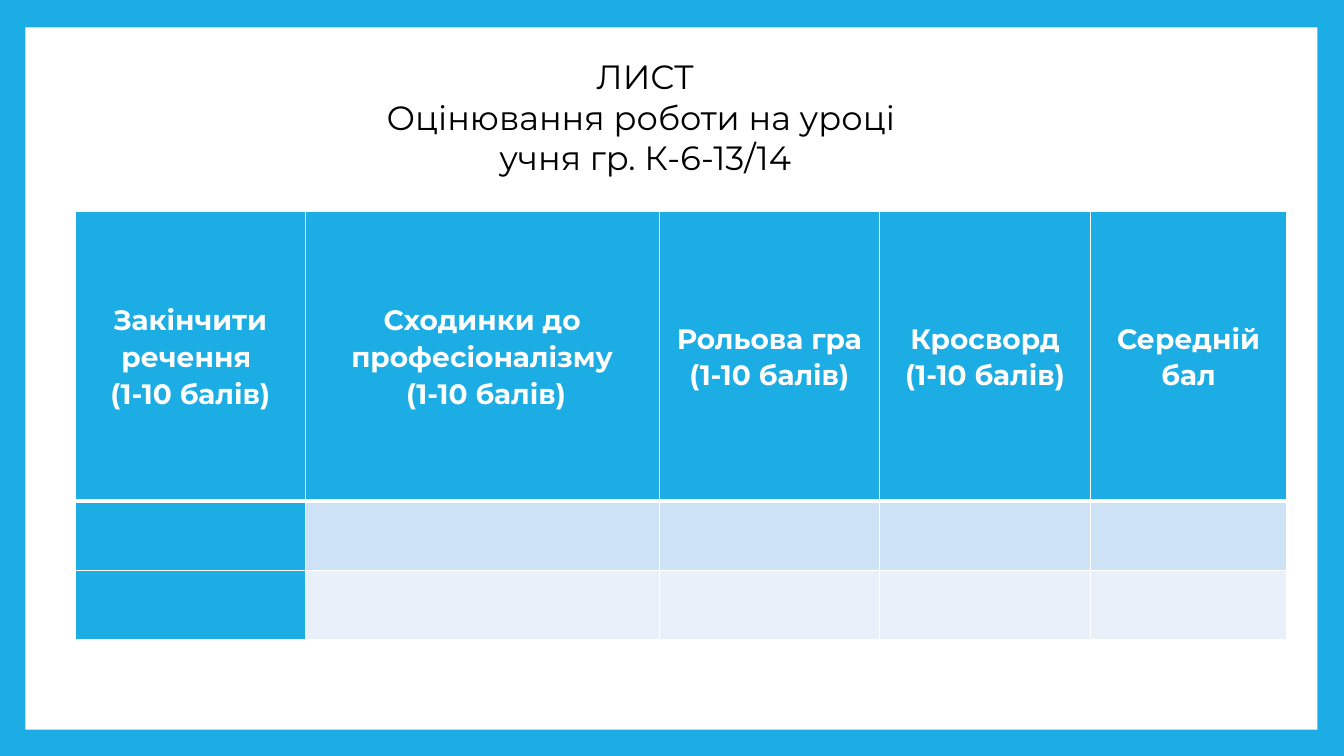
import pptx
import pptx.util
import pptx.dml.color
import pptx.enum.shapes
import pptx.enum.text
import pptx.oxml.ns
from lxml import etree

Cm, Pt = pptx.util.Cm, pptx.util.Pt

# Content
TITLE = ["ЛИСТ", "Оцінювання роботи на уроці ", "учня гр. К-6-13/14"]
HEADS = [
    ["Закінчити", "речення ", "(1-10 балів)"],
    ["Сходинки до професіоналізму", " (1-10 балів)"],
    ["Рольова гра", "(1-10 балів)"],
    ["Кросворд", "(1-10 балів)"],
    ["Середній бал"],
]

# Sizes in centimetres
SLIDE = (33.87, 19.05)
PANEL = (0.64, 0.69, 32.56, 17.7)
TITLE_BOX = (8.26, 1.24, 16, 3.4)
GRID_AT = (1.9, 5.33)
COLS = [5.79, 8.92, 5.56, 5.31, 4.95]
ROWS = [7.29, 1.75, 1.75]

THEME = {
    "font": "Montserrat",
    "title": 24, "head": 20,
    "blue": "1CADE4", "white": "FFFFFF", "black": "000000",
    "bands": ["CDE3F5", "E8F1FA"],
    "thin": 1, "thick": 3,
}


def paint(fill, color):
    fill.solid()
    fill.fore_color.rgb = pptx.dml.color.RGBColor.from_string(color)


def write(frame, lines, size, color, bold=False, space=None):
    for i, line in enumerate(lines):
        para = frame.add_paragraph() if i else frame.paragraphs[0]
        para.alignment = pptx.enum.text.PP_ALIGN.CENTER
        para.line_spacing = space
        run = para.add_run()
        run.text = line
        font = run.font
        font.name, font.size, font.bold = THEME["font"], Pt(size), bold
        font.color.rgb = pptx.dml.color.RGBColor.from_string(color)


def edge(cell, side, width):
    qn = pptx.oxml.ns.qn
    props = cell._tc.get_or_add_tcPr()
    line = etree.SubElement(props, qn("a:ln" + side), w=str(Pt(width)))
    fill = etree.SubElement(line, qn("a:solidFill"))
    etree.SubElement(fill, qn("a:srgbClr"), val=THEME["white"])


def build():
    deck = pptx.Presentation()
    deck.slide_width, deck.slide_height = map(Cm, SLIDE)
    slide = deck.slides.add_slide(deck.slide_layouts[6])
    middle = pptx.enum.text.MSO_ANCHOR.MIDDLE

    # Blue frame with a white panel
    paint(slide.background.fill, THEME["blue"])
    panel = slide.shapes.add_shape(
        pptx.enum.shapes.MSO_SHAPE.RECTANGLE, *map(Cm, PANEL))
    panel.shadow.inherit = False
    paint(panel.fill, THEME["white"])
    panel.line.fill.background()

    # Title
    frame = slide.shapes.add_textbox(*map(Cm, TITLE_BOX)).text_frame
    frame.word_wrap = True
    frame.vertical_anchor = middle
    write(frame, TITLE, THEME["title"], THEME["black"])

    # Score table
    grid = slide.shapes.add_table(
        len(ROWS), len(COLS), *map(Cm, GRID_AT),
        Cm(sum(COLS)), Cm(sum(ROWS))).table
    for col, width in zip(grid.columns, COLS):
        col.width = Cm(width)
    for row, height in zip(grid.rows, ROWS):
        row.height = Cm(height)

    for r in range(len(ROWS)):
        for c in range(len(COLS)):
            cell = grid.cell(r, c)
            heavy = {0: "B", 1: "T"}.get(r)
            for side in "LRTB":
                edge(cell, side, THEME["thick" if side == heavy else "thin"])
            solid = r == 0 or c == 0
            paint(cell.fill, THEME["blue"] if solid else THEME["bands"][r - 1])

    # Column headings
    for c, lines in enumerate(HEADS):
        cell = grid.cell(0, c)
        cell.vertical_anchor = middle
        cell.margin_left = cell.margin_right = Cm(0.18)
        cell.margin_top = cell.margin_bottom = 0
        write(cell.text_frame, lines, THEME["head"], THEME["white"], True, 1.07)

    deck.save("out.pptx")


if __name__ == "__main__":
    build()
